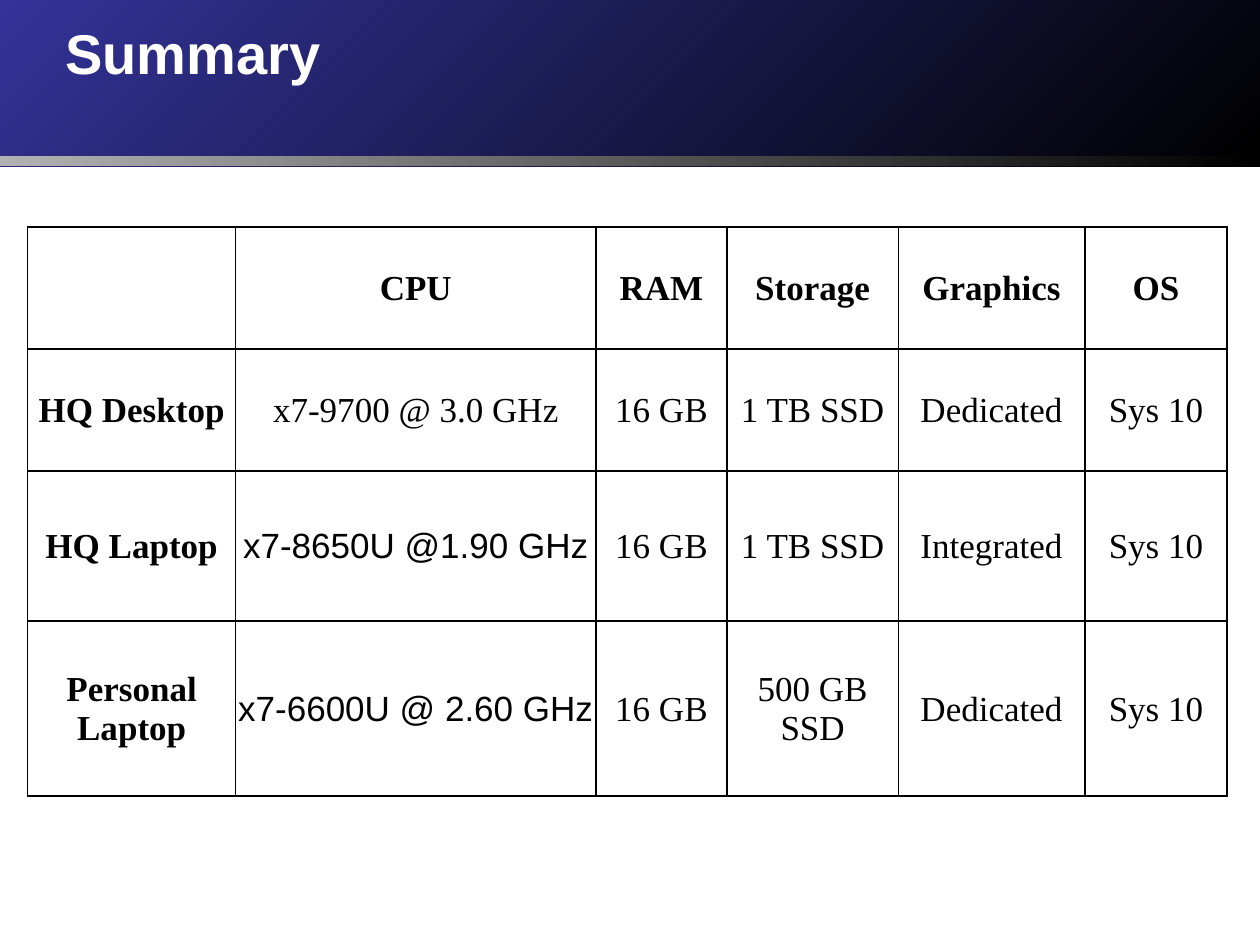
from dataclasses import dataclass

from lxml import etree
from pptx import Presentation
from pptx.dml.color import RGBColor
from pptx.enum.shapes import MSO_SHAPE
from pptx.enum.text import MSO_ANCHOR, PP_ALIGN
from pptx.oxml.ns import qn
from pptx.util import Inches, Pt

RECTANGLE = MSO_SHAPE.RECTANGLE
CENTER, LEFT = PP_ALIGN.CENTER, PP_ALIGN.LEFT
MIDDLE, TOP = MSO_ANCHOR.MIDDLE, MSO_ANCHOR.TOP


@dataclass(frozen=True)
class Theme:
    navy: str = "333399"
    silver: str = "B2B2B2"
    black: str = "000000"
    white: str = "FFFFFF"
    sans: str = "Arial"
    serif: str = "Times New Roman"
    title_size: int = 32
    table_size: int = 20
    border_width: int = 1


THEME = Theme()

COLUMN_WIDTHS = [1.65, 2.86, 1.04, 1.36, 1.48, 1.13]
ROW_HEIGHTS = [0.97, 0.97, 1.19, 1.39]
COMPUTERS = [
    ["", "CPU", "RAM", "Storage", "Graphics", "OS"],
    ["HQ Desktop", "x7-9700 @ 3.0 GHz", "16 GB", "1 TB SSD", "Dedicated", "Sys 10"],
    ["HQ Laptop", "x7-8650U @1.90 GHz", "16 GB", "1 TB SSD", "Integrated", "Sys 10"],
    ["Personal Laptop", "x7-6600U @ 2.60 GHz", "16 GB", "500 GB SSD", "Dedicated", "Sys 10"],
]
SANS_CELLS = {(2, 1), (3, 1)}


def write_text(frame, text, *, size, font, color, bold=False, align=LEFT):
    """Fill the first paragraph of a text frame and return its run."""
    frame.word_wrap = True
    paragraph = frame.paragraphs[0]
    paragraph.alignment = align
    run = paragraph.add_run()
    run.text = text
    run.font.size = Pt(size)
    run.font.bold = bold
    run.font.color.rgb = RGBColor.from_string(color)
    run.font.name = font
    return run


def add_text_shadow(run):
    effects = etree.Element(qn("a:effectLst"))
    shadow = etree.SubElement(effects, qn("a:outerShdw"), dist="35921", dir="2700000", algn="ctr")
    etree.SubElement(shadow, qn("a:srgbClr"), val=THEME.black)
    run.font.fill._xPr.find(qn("a:solidFill")).addnext(effects)


def add_gradient_band(slide, left, top, width, height, *, colors, angle):
    band = slide.shapes.add_shape(RECTANGLE, left, top, width, height)
    band.shadow.inherit = False
    band.line.fill.background()
    band.fill.gradient()
    band.fill.gradient_angle = angle
    for stop, color, position in zip(band.fill.gradient_stops, colors, (0, 1)):
        stop.color.rgb = RGBColor.from_string(color)
        stop.position = position


def add_header(slide, left, top, width, height):
    stripe_height = Inches(0.08)
    add_gradient_band(slide, left, top, width, height,
                      colors=(THEME.navy, THEME.black), angle=315)
    add_gradient_band(slide, left, top + height - stripe_height, width, stripe_height,
                      colors=(THEME.silver, THEME.black), angle=0)
    title = slide.shapes.add_textbox(left + Inches(0.42), top + Inches(0.1),
                                     width - Inches(0.92), Inches(1))
    title.text_frame.vertical_anchor = TOP
    run = write_text(title.text_frame, "Summary", size=THEME.title_size,
                     font=THEME.sans, color=THEME.white, bold=True)
    add_text_shadow(run)


def set_borders(cell):
    properties = cell._tc.get_or_add_tcPr()
    for index, side in enumerate(("lnL", "lnR", "lnT", "lnB")):
        line = etree.Element(qn(f"a:{side}"), w=str(Pt(THEME.border_width)))
        fill = etree.SubElement(line, qn("a:solidFill"))
        etree.SubElement(fill, qn("a:srgbClr"), val=THEME.black)
        properties.insert(index, line)


def add_computer_table(slide, left, top, width, height):
    table = slide.shapes.add_table(len(ROW_HEIGHTS), len(COLUMN_WIDTHS),
                                   left, top, width, height).table
    table.first_row = False
    table.horz_banding = False
    for column, column_width in zip(table.columns, COLUMN_WIDTHS):
        column.width = Inches(column_width)
    for row, row_height in zip(table.rows, ROW_HEIGHTS):
        row.height = Inches(row_height)

    for row_index, values in enumerate(COMPUTERS):
        for column_index, value in enumerate(values):
            cell = table.cell(row_index, column_index)
            cell.fill.background()
            cell.vertical_anchor = MIDDLE
            cell.margin_left = cell.margin_top = cell.margin_right = Inches(0.01)
            cell.margin_bottom = 0
            set_borders(cell)
            if value:
                is_sans = (row_index, column_index) in SANS_CELLS
                write_text(cell.text_frame, value, size=THEME.table_size,
                           font=THEME.sans if is_sans else THEME.serif,
                           color=THEME.black, align=CENTER,
                           bold=row_index == 0 or column_index == 0)


def main():
    presentation = Presentation()
    presentation.slide_width = Inches(10)
    presentation.slide_height = Inches(7.5)
    slide = presentation.slides.add_slide(presentation.slide_layouts[6])
    add_header(slide, 0, 0, presentation.slide_width, Inches(1.32))
    add_computer_table(slide, Inches(0.22), Inches(1.8),
                       Inches(sum(COLUMN_WIDTHS)), Inches(sum(ROW_HEIGHTS)))
    presentation.save("out.pptx")


if __name__ == "__main__":
    main()
